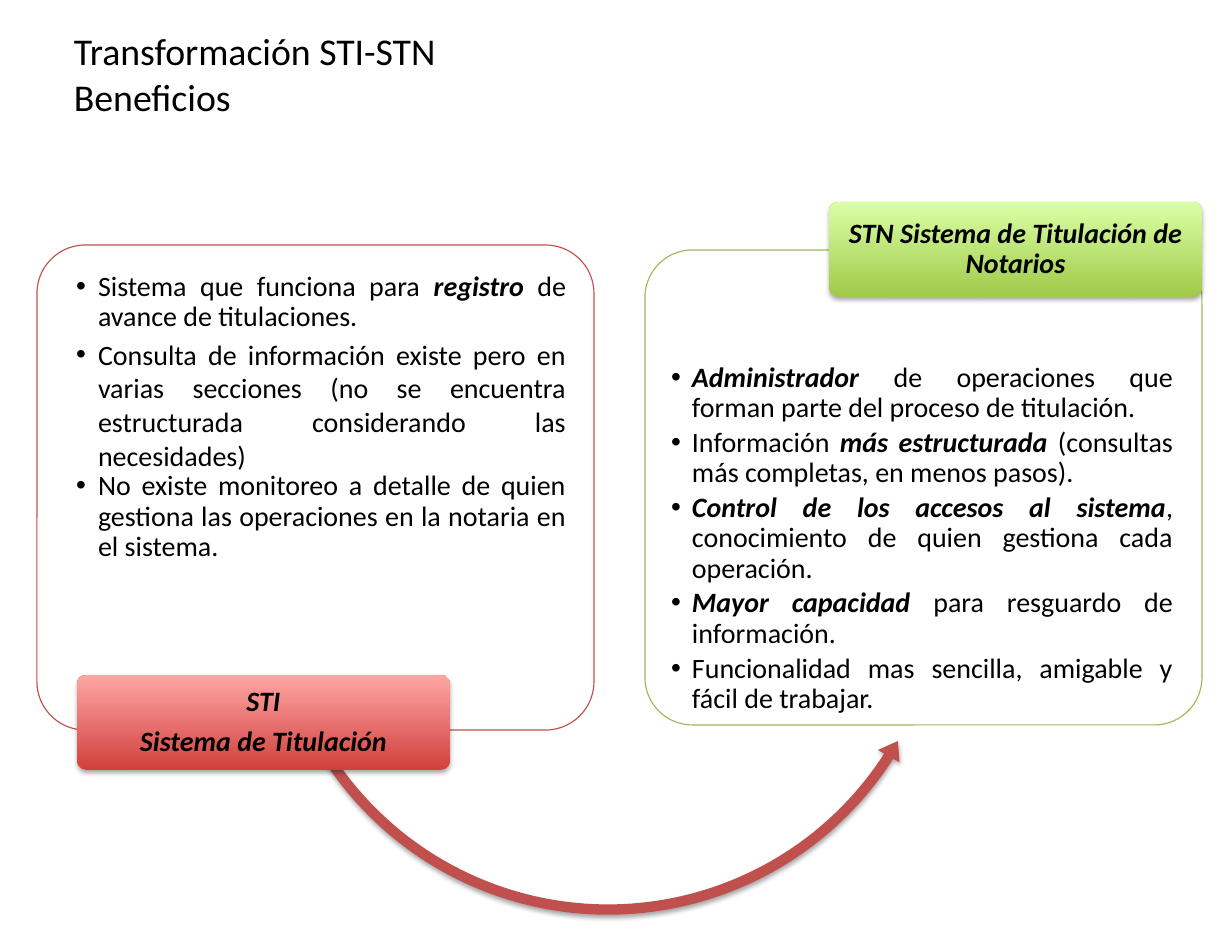
from lxml import etree
from pptx import Presentation
from pptx import util as u
from pptx.dml.color import RGBColor
from pptx.enum import shapes, text
from pptx.oxml.ns import qn

PX = 914400 // 112
FONT = "Calibri"
COLORS = {
    "text": "000000", "panel": "FFFFFF",
    "red": "C0504D", "red_dark": "D1403C", "red_light": "FFA6A5",
    "green": "9BBB59", "green_dark": "A0CA4A", "green_light": "DAFFA5",
}

# Each item is a list of (words, emphasized) runs.
STI_ITEMS = [
    [("Sistema que funciona para ", False), ("registro", True),
     (" de avance de titulaciones.", False)],
    [("Consulta de información existe pero en varias secciones "
      "(no se encuentra estructurada considerando las necesidades)", False)],
    [("No existe monitoreo a detalle de quien gestiona las operaciones "
      "en la notaria en el sistema.", False)],
]
STN_ITEMS = [
    [("Administrador", True),
     (" de operaciones que forman parte del proceso de titulación.", False)],
    [("Información ", False), ("más estructurada ", True),
     ("(consultas más completas, en menos pasos).", False)],
    [("Control de los accesos al sistema", True),
     (", conocimiento de quien gestiona cada operación.", False)],
    [("Mayor capacidad ", True), ("para resguardo de información.", False)],
    [("Funcionalidad mas sencilla, amigable y fácil de trabajar.", False)],
]


def px(*lengths):
    return [u.Emu(length * PX) for length in lengths]


def color(name):
    return RGBColor.from_string(COLORS[name])


def add_run(paragraph, words, size=18, emphasized=False):
    run = paragraph.add_run()
    run.text = words
    run.font.name = FONT
    run.font.size = u.Pt(size)
    run.font.bold = run.font.italic = emphasized
    run.font.color.rgb = color("text")


def set_frame(frame, anchor, insets):
    """Insets are left, top, right, bottom in px."""
    frame.word_wrap = True
    frame.auto_size = text.MSO_AUTO_SIZE.NONE
    frame.vertical_anchor = anchor
    (frame.margin_left, frame.margin_top,
     frame.margin_right, frame.margin_bottom) = px(*insets)


def place(shape, box):
    shape.left, shape.top, shape.width, shape.height = px(*box)


def next_paragraph(frame, index):
    return frame.add_paragraph() if index else frame.paragraphs[0]


def add_shadow(shape):
    properties = shape._element.spPr
    effects = etree.SubElement(properties, qn("a:effectLst"))
    outer = etree.SubElement(effects, qn("a:outerShdw"), blurRad="40000",
                             dist="23000", dir="5400000", rotWithShape="0")
    black = etree.SubElement(outer, qn("a:srgbClr"), val="000000")
    etree.SubElement(black, qn("a:alpha"), val="35000")


def add_rounded(slide, box):
    rounded = slide.shapes.add_shape(
        shapes.MSO_SHAPE.ROUNDED_RECTANGLE, *px(*box))
    rounded.adjustments[0] = 0.1
    return rounded


def add_panel(slide, box, hue):
    panel = add_rounded(slide, box)
    panel.shadow.inherit = False
    panel.fill.solid()
    panel.fill.fore_color.rgb = color("panel")
    panel.line.color.rgb = color(hue)
    panel.line.width = u.Pt(0.75)


def add_label(slide, box, hue, lines):
    label = add_rounded(slide, box)
    label.fill.gradient()
    label.fill.gradient_angle = 90
    for stop, shade in zip(label.fill.gradient_stops, ("dark", "light")):
        stop.color.rgb = color(f"{hue}_{shade}")
    label.line.fill.background()
    add_shadow(label)
    set_frame(label.text_frame, text.MSO_ANCHOR.MIDDLE, (4, 3, 4, 3))
    for index, words in enumerate(lines):
        paragraph = next_paragraph(label.text_frame, index)
        paragraph.alignment = text.PP_ALIGN.CENTER
        paragraph.line_spacing = 0.9
        paragraph.space_after = u.Pt(6.3 if index < len(lines) - 1 else 0)
        add_run(paragraph, words, emphasized=True)


def add_transition_arrow(slide):
    arrow = slide.shapes.add_shape(
        shapes.MSO_SHAPE.LEFT_CIRCULAR_ARROW, *px(262, 230, 692, 692))
    for index, value in enumerate((0.015, 1.822, 15.956, 86.624, 0.018)):
        arrow.adjustments[index] = value
    arrow.rotation = 6.1
    arrow.fill.solid()
    arrow.fill.fore_color.rgb = color("red")
    arrow.line.fill.background()
    add_shadow(arrow)


def fill_list(slide, body, box, items, indent, top_inset, loose=()):
    """Write bullets; items whose index is in loose get full line spacing."""
    slide.shapes._spTree.append(body._element)  # in front of its panel
    place(body, box)
    set_frame(body.text_frame, text.MSO_ANCHOR.TOP, (16, top_inset, 16, 16))
    for index, runs in enumerate(items):
        paragraph = next_paragraph(body.text_frame, index)
        properties = paragraph._p.get_or_add_pPr()
        left, hanging = px(*indent)
        properties.set("marL", str(left))
        properties.set("indent", str(-hanging))
        paragraph.alignment = text.PP_ALIGN.JUSTIFY
        paragraph.space_before = u.Pt(0)
        paragraph.space_after = u.Pt(0 if index in loose else 3)
        paragraph.line_spacing = 1.0 if index in loose else 0.9
        for words, emphasized in runs:
            add_run(paragraph, words, emphasized=emphasized)


def fill_title(title):
    place(title, (62, 21, 1109, 105))
    set_frame(title.text_frame, text.MSO_ANCHOR.MIDDLE, (12, 7, 12, 7))
    heading = title.text_frame.paragraphs[0]
    heading.alignment = text.PP_ALIGN.LEFT
    add_run(heading, "Transformación STI-STN", 24.3)
    heading.add_line_break()
    add_run(heading, "Beneficios", 24.3)


def main():
    deck = Presentation()
    deck.slide_width, deck.slide_height = px(1232, 952)
    slide = deck.slides.add_slide(deck.slide_layouts[3])
    title, sti_list, stn_list = slide.placeholders

    fill_title(title)
    add_panel(slide, (37, 245, 557, 485), "red")
    fill_list(slide, sti_list, (48, 256, 534, 358), STI_ITEMS,
              indent=(34, 22), top_inset=16, loose=(1,))
    add_transition_arrow(slide)
    add_label(slide, (77, 675, 373, 95), "red",
              ["STI", "Sistema de Titulación"])
    add_panel(slide, (645, 250, 557, 475), "green")
    fill_list(slide, stn_list, (655, 363, 534, 351), STN_ITEMS,
              indent=(21, 21), top_inset=0)
    add_label(slide, (829, 202, 373, 95), "green",
              ["STN Sistema de Titulación de Notarios"])
    deck.save("out.pptx")


if __name__ == "__main__":
    main()
